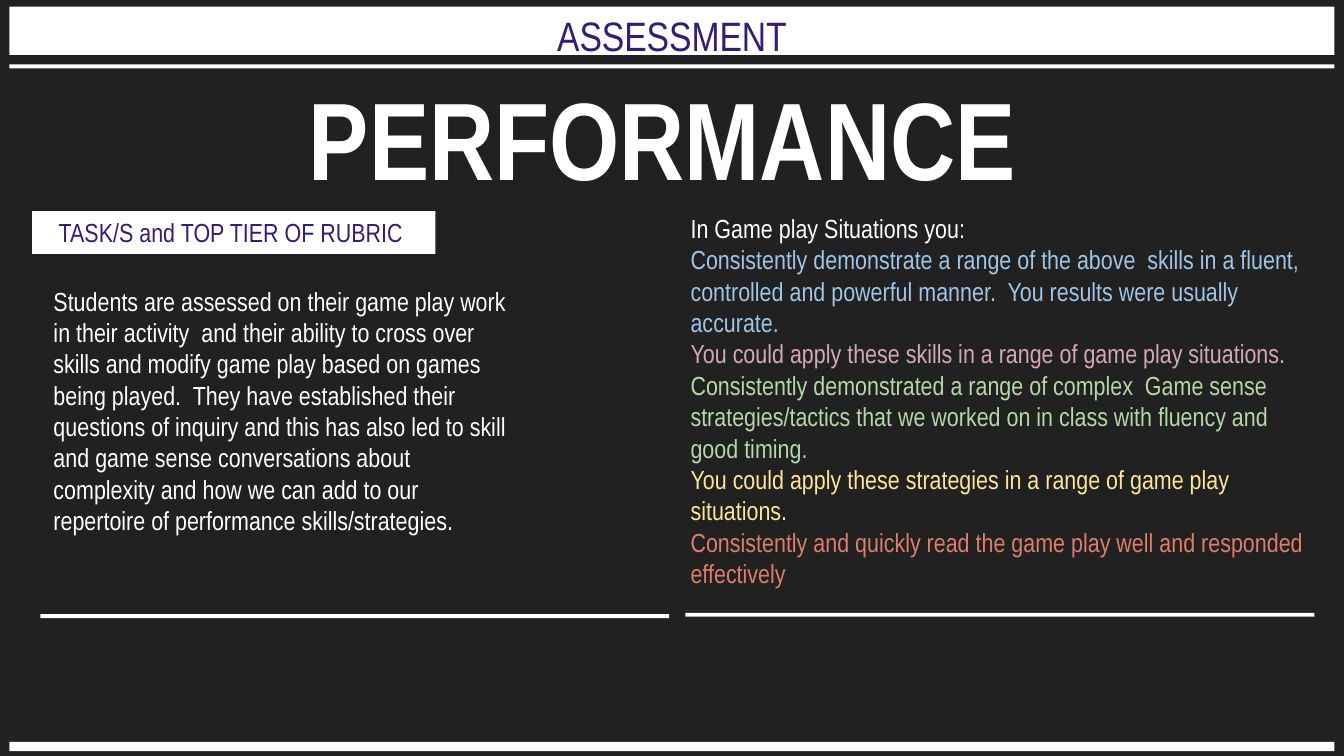
from pptx import Presentation
from pptx.dml.color import RGBColor
from pptx.enum.shapes import MSO_SHAPE
from pptx.enum.text import MSO_ANCHOR, MSO_AUTO_SIZE, PP_ALIGN
from pptx.util import Inches, Pt

RECT = MSO_SHAPE.RECTANGLE
TOP, MIDDLE = MSO_ANCHOR.TOP, MSO_ANCHOR.MIDDLE
LEFT, CENTER = PP_ALIGN.LEFT, PP_ALIGN.CENTER
FONT = "Arial Narrow"
COLORS = {
    "dark": "212121", "white": "FFFFFF", "purple": "351C75",
    "blue": "9FC5E8", "pink": "D5A6BD", "green": "B6D7A8",
    "yellow": "FFE599", "red": "DD7E6B",
}


def add_bar(left, top, width, height):
    bar = slide.shapes.add_shape(
        RECT, Inches(left), Inches(top), Inches(width), Inches(height))
    bar.shadow.inherit = False
    bar.fill.solid()
    bar.fill.fore_color.rgb = RGBColor.from_string(COLORS["white"])
    bar.line.fill.background()
    return bar


def set_text(shape, lines, size, align=LEFT, anchor=TOP, bold=False):
    frame = shape.text_frame
    frame.text = "\n".join(text for text, color in lines)
    frame.word_wrap = True
    frame.auto_size = MSO_AUTO_SIZE.NONE
    frame.vertical_anchor = anchor
    frame.margin_left = frame.margin_right = Inches(0.1)
    frame.margin_top = frame.margin_bottom = Inches(0.1)
    for para, (text, color) in zip(frame.paragraphs, lines):
        para.alignment = align
        font = para.runs[0].font
        font.name, font.size, font.bold = FONT, Pt(size), bold
        font.color.rgb = RGBColor.from_string(COLORS[color])


# Widescreen 16:9 page
prs = Presentation()
prs.slide_width = Inches(10)
prs.slide_height = Inches(10) * 9 // 16
slide = prs.slides.add_slide(prs.slide_layouts[5])
slide.background.fill.solid()
slide.background.fill.fore_color.rgb = RGBColor.from_string(COLORS["dark"])

# Frame bars and column rules
for box in [
    (0.07, 5.52, 9.86, 0.07),
    (0.07, 0.48, 9.86, 0.03),
    (0.07, 0.05, 9.86, 0.36),
    (5.1, 4.56, 4.68, 0.03),
    (0.3, 4.57, 4.68, 0.03),
]:
    add_bar(*box)

# Title
title = slide.shapes.title
title.left, title.top = Inches(-0.17), Inches(0.42)
title.width, title.height = Inches(10.39), Inches(0.71)
set_text(title, [("PERFORMANCE ", "white")], 59, CENTER, bold=True)

# Section banner
banner = slide.shapes.add_textbox(
    Inches(0.07), Inches(-0.02), Inches(9.86), Inches(0.44))
set_text(banner, [("ASSESSMENT", "purple")], 22, CENTER)

# Task label
label = add_bar(0.24, 1.57, 3, 0.32)
set_text(label, [("TASK/S and TOP TIER OF RUBRIC ", "purple")],
         14, CENTER, MIDDLE)

# Task description
task = slide.shapes.add_textbox(
    Inches(0.3), Inches(2.02), Inches(3.64), Inches(1.18))
set_text(task, [(
    "Students are assessed on their game play work in their activity  and "
    "their ability to cross over skills and modify game play based on games "
    "being played.  They have established their questions of inquiry and "
    "this has also led to skill and game sense conversations about "
    "complexity and how we can add to our repertoire of performance "
    "skills/strategies.", "white")], 14)

# Rubric, one colour per criterion
rubric = slide.shapes.add_textbox(
    Inches(5.04), Inches(1.48), Inches(4.84), Inches(3))
set_text(rubric, [
    ("In Game play Situations you:", "white"),
    ("Consistently demonstrate a range of the above  skills in a fluent, "
     "controlled and powerful manner.  You results were usually accurate.",
     "blue"),
    ("You could apply these skills in a range of game play situations.",
     "pink"),
    ("Consistently demonstrated a range of complex  Game sense "
     "strategies/tactics that we worked on in class with fluency and good "
     "timing.", "green"),
    ("You could apply these strategies in a range of game play situations.",
     "yellow"),
    ("Consistently and quickly read the game play well and responded "
     "effectively", "red"),
], 14)

prs.save("out.pptx")
